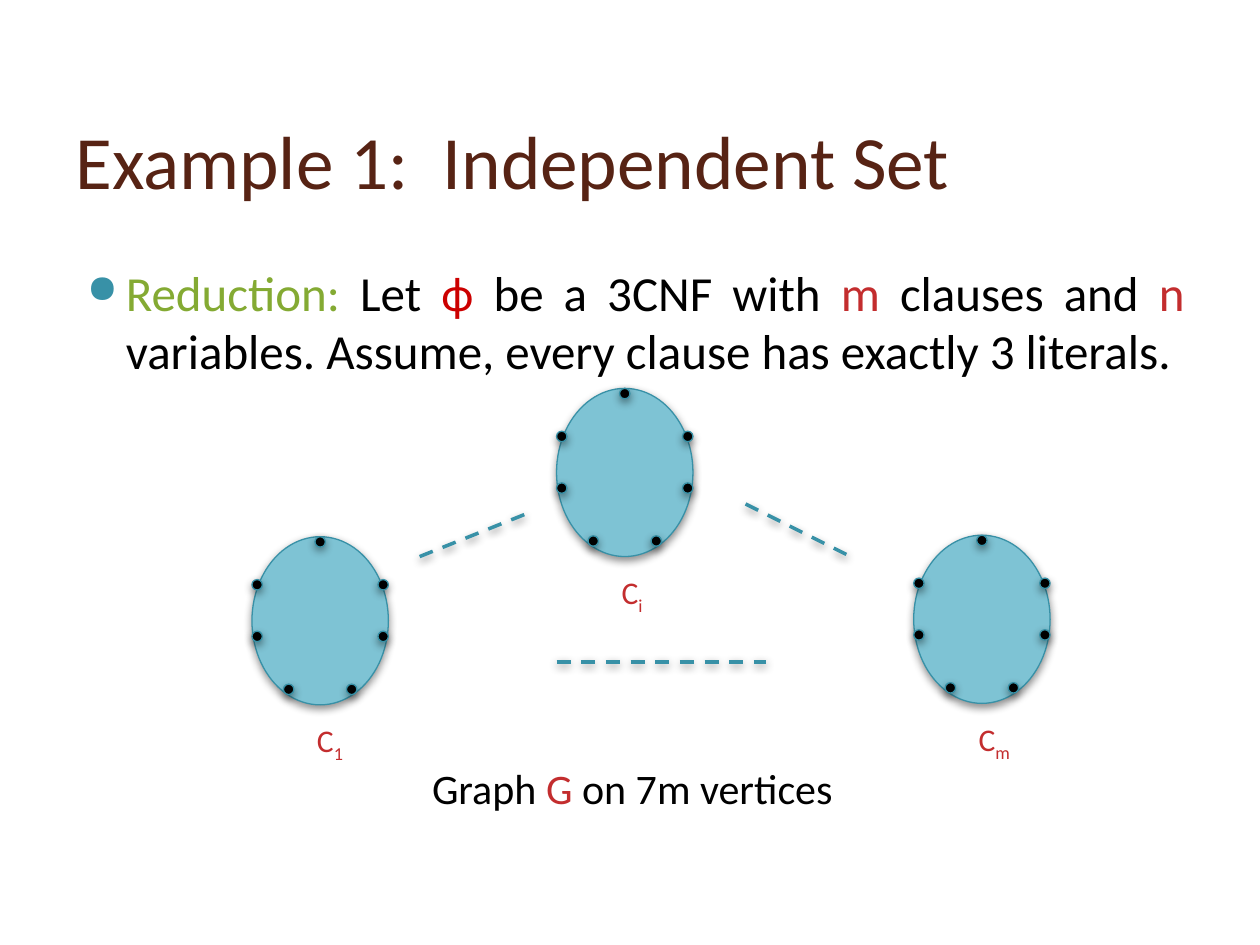
import lxml.etree
import pptx
import pptx.dml.color
import pptx.enum.dml
import pptx.enum.shapes
import pptx.enum.text
import pptx.oxml.ns
import pptx.util

Cm = pptx.util.Cm
Pt = pptx.util.Pt
ALIGN = pptx.enum.text.PP_ALIGN
ANCHOR = pptx.enum.text.MSO_ANCHOR

COLOURS = {
    "title": "572314",
    "text": "000000",
    "lead": "84AA33",
    "formula": "CC0000",
    "symbol": "C32D2E",
    "accent": "3891A7",
    "cluster": "7EC3D4",
    "vertex": "000000",
}
VERTEX_SIZE = 0.21
VERTEX_PLACES = [
    (0.5, 0), (0, 0.34), (1, 0.34), (1, 0.75),
    (0, 0.75), (0.25, 1.17), (0.75, 1.17),
]
CLUSTERS = [
    ((11.22, 7.83, 2.75, 3.39), "i", 1.06),
    ((5.08, 10.82, 2.75, 3.39), "1", 1.27),
    ((18.42, 10.79, 2.75, 3.39), "m", 1.48),
]
LINKS = [
    (15.03, 10.16, 17.15, 11.22),
    (11.22, 13.34, 15.45, 13.34),
    (8.46, 11.22, 10.58, 10.37),
]


def colour(name):
    """Return the named colour as an RGB value."""
    return pptx.dml.color.RGBColor.from_string(COLOURS[name])


def add_child(parent, tag, **values):
    """Append a drawing element with the given attributes."""
    return lxml.etree.SubElement(parent, pptx.oxml.ns.qn(tag), values)


def add_shadow(shape):
    """Give a shape or connector a soft shadow straight below."""
    effects = add_child(shape._element.spPr, "a:effectLst")
    shadow = add_child(effects, "a:outerShdw", blurRad=str(Pt(5)), dist=str(Pt(2)),
                       dir="5400000", algn="ctr", rotWithShape="0")
    add_child(add_child(shadow, "a:srgbClr", val="000000"), "a:alpha", val="43000")


def add_text(slide, box, spans, size, align=ALIGN.LEFT, anchor=ANCHOR.TOP):
    """Add a one-paragraph text box of (text, colour) spans and return the paragraph."""
    frame = slide.shapes.add_textbox(*map(Cm, box)).text_frame
    for name, value in {"word_wrap": True, "vertical_anchor": anchor}.items():
        setattr(frame, name, value)
    para = frame.paragraphs[0]
    para.alignment = align
    for text, tint in spans:
        span = para.add_run()
        span.text = text
        for name, value in {"name": "Calibri", "size": Pt(size)}.items():
            setattr(span.font, name, value)
        span.font.color.rgb = colour(tint)
    return para


def add_oval(slide, box, fill):
    """Add a shadowed oval with a thin accent outline."""
    oval = slide.shapes.add_shape(pptx.enum.shapes.MSO_SHAPE.OVAL, *map(Cm, box))
    oval.fill.solid()
    oval.fill.fore_color.rgb = colour(fill)
    oval.line.color.rgb = colour("accent")
    oval.line.width = Pt(0.75)
    add_shadow(oval)


def add_cluster(slide, box, index, label_width):
    """Add a clause cluster with its seven vertices and its label below."""
    left, top, width, height = box
    span = width - VERTEX_SIZE
    add_oval(slide, box, "cluster")
    for across, down in VERTEX_PLACES:
        place = (left + across * span, top + down * span, VERTEX_SIZE, VERTEX_SIZE)
        add_oval(slide, place, "vertex")
    label_box = (left + 1.06, top + height + 0.21, label_width, 1.03)
    para = add_text(slide, label_box, [("C", "symbol"), (index, "symbol")], 18, ALIGN.JUSTIFY)
    para.runs[1].font._element.set("baseline", "-25000")


def add_link(slide, ends):
    """Add a dashed line between two points."""
    link = slide.shapes.add_connector(pptx.enum.shapes.MSO_CONNECTOR.STRAIGHT, *map(Cm, ends))
    link.line.color.rgb = colour("accent")
    for name, value in {"width": Pt(2), "dash_style": pptx.enum.dml.MSO_LINE.DASH}.items():
        setattr(link.line, name, value)
    add_shadow(link)


def add_body(slide, box):
    """Add the bulleted statement of the reduction."""
    spans = [
        ("Reduction: ", "lead"),
        ("Let ", "text"),
        ("ϕ ", "formula"),
        ("be a 3CNF with ", "text"),
        ("m", "symbol"),
        (" clauses and ", "text"),
        ("n", "symbol"),
        (" variables. Assume, every clause has exactly 3 literals.", "text"),
    ]
    para = add_text(slide, box, spans, 28, ALIGN.JUSTIFY)
    para.space_before = Pt(6)
    layout = para._p.get_or_add_pPr()
    for name, value in {"marL": Cm(1.02), "indent": Cm(-0.79)}.items():
        layout.set(name, str(value))
    add_child(add_child(layout, "a:buClr"), "a:srgbClr", val=COLOURS["accent"])
    add_child(layout, "a:buSzPct", val="80000")
    add_child(layout, "a:buChar", char="●")


def add_graph(slide):
    """Add the clusters, the dashed links and the caption."""
    for box, index, label_width in CLUSTERS:
        add_cluster(slide, box, index, label_width)
    for ends in LINKS:
        add_link(slide, ends)
    caption = [("Graph ", "text"), ("G", "symbol"), (" on 7m vertices", "text")]
    add_text(slide, (8.46, 15.24, 9.1, 1.27), caption, 24)


def main():
    """Build and save the deck."""
    deck = pptx.Presentation()
    deck.slide_width, deck.slide_height = Cm(25.4), Cm(19.05)
    slide = deck.slides.add_slide(deck.slide_layouts[6])
    title = [("Example 1:  Independent Set", "title")]
    add_text(slide, (1.27, 1.96, 24.13, 2.49), title, 43, anchor=ANCHOR.MIDDLE)
    add_body(slide, (1.27, 5.16, 22.86, 13.03))
    add_graph(slide)
    deck.save("out.pptx")


if __name__ == "__main__":
    main()
